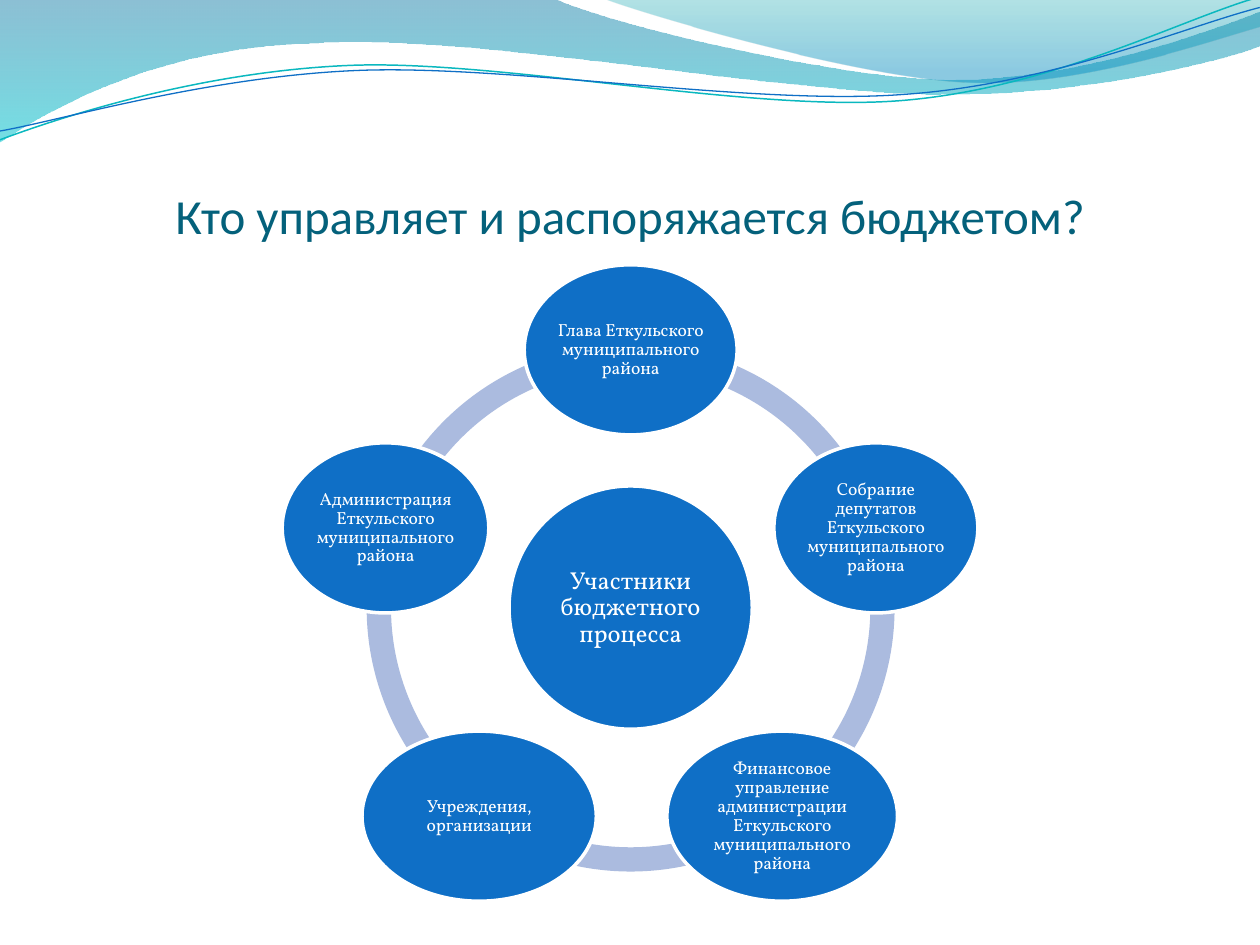
from math import cos, radians, sin

from lxml.etree import SubElement
from pptx import Presentation
from pptx.dml.color import RGBColor
from pptx.enum.shapes import MSO_SHAPE as Preset
from pptx.enum.text import MSO_ANCHOR as Anchor, PP_ALIGN as Align
from pptx.oxml.ns import qn
from pptx.util import Pt

WHITE = RGBColor(0xFF, 0xFF, 0xFF)
BLUE = RGBColor(0x0F, 0x6F, 0xC6)
TEAL = RGBColor(0x0A, 0xB8, 0xBF)
RING = RGBColor(0xAB, 0xBB, 0xDF)
TITLE_COLOR = RGBColor(0x04, 0x61, 0x7B)
DEEP_BLUE = RGBColor(0x00, 0x74, 0xA1)
CYAN = RGBColor(0x00, 0xC6, 0xCF)
SEA = RGBColor(0x00, 0xA1, 0xA9)
SKY = RGBColor(0x00, 0x8B, 0xBF)

TITLE = "Кто управляет и распоряжается бюджетом?"
HUB = "Участники бюджетного процесса"
# Clockwise from the top: text, oval width
PARTICIPANTS = [
    ("Глава Еткульского муниципального района", 121.7),
    ("Собрание депутатов Еткульского муниципального района", 116.6),
    ("Финансовое управление администрации Еткульского муниципального района", 131.8),
    ("Учреждения, организации", 133.9),
    ("Администрация Еткульского муниципального района", 118.1),
]

# Wave paths: a pair is a straight step, six numbers are a Bezier step
BANDS = [
    ([(0, 0), (316.8, -0.7), (342.7, 12.2, 478.1, 45.4, 545.8, 45.4),
      (614.2, 45.4, 689.8, 18.7, 720, 6.5), (720.7, 25.9),
      (707.8, 31.7, 626.4, 54.7, 537.1, 54),
      (447.8, 54, 275, 20.2, 185, 24.5),
      (92.9, 25.9, 33.1, 59.8, -0.7, 81.4)],
     [(0, DEEP_BLUE, 45), (1, CYAN, 55)]),
    ([(344.9, -0.7), (366.5, 7.9, 491, 44.6, 553.7, 46.8),
      (616.3, 49.7, 691.9, 23, 720, 15.1), (720, 0)],
     [(0, SEA, 30), (0.8, SKY, 45)]),
]
STROKES = [
    ([(0, 79.9), (34.6, 67, 113.8, 41, 199.4, 37.4),
      (284.4, 33.8, 427, 64.1, 513.4, 57.6),
      (599.8, 51.1, 675.4, 10.8, 718.6, -1.4)], TEAL, 0.85),
    ([(0, 74.9), (33.8, 69.1, 118.1, 43.9, 203.8, 40.3),
      (290.2, 36.7, 429.8, 60.5, 516.2, 54),
      (601.9, 48.2, 677.5, 15.1, 720, 4.3)], BLUE, 0.75),
]
TILT = 2.7  # degrees, counter-clockwise
UNITS = 100  # path units in a point

CENTER_X, CENTER_Y = 360.4, 347.2
RING_SIZE, HUB_SIZE = 301.7, 139
ORBIT, OVAL_HEIGHT = 147.3, 97.2

prs = Presentation()
prs.slide_width, prs.slide_height = Pt(720), Pt(540)
slide = prs.slides.add_slide(prs.slide_layouts[6])
shapes = slide.shapes


def turn(steps, degrees):
    """Turn a path clockwise about the middle of its end points."""
    mid_x, mid_y = ((a + b) / 2 for a, b in zip(steps[0], steps[-1][-2:]))
    c, s = cos(radians(degrees)), sin(radians(degrees))
    turned = []
    for step in steps:
        flat = []
        for x, y in zip(step[::2], step[1::2]):
            flat += [mid_x + (x - mid_x) * c - (y - mid_y) * s,
                     mid_y + (x - mid_x) * s + (y - mid_y) * c]
        turned.append(tuple(flat))
    return turned


def add_outline(steps, close):
    """Build a freeform, then join each three Bezier points into a curve."""
    points = [(x * UNITS, y * UNITS)
              for step in steps for x, y in zip(step[::2], step[1::2])]
    builder = shapes.build_freeform(*points[0], scale=Pt(1) / UNITS)
    builder.add_line_segments(points[1:], close=close)
    outline = builder.convert_to_shape()
    outline.shadow.inherit = False
    lines = iter(list(outline._element.spPr.iter(qn("a:lnTo"))))
    for step in steps[1:]:
        line = next(lines)
        if len(step) == 6:
            line.tag = qn("a:cubicBezTo")
            for _ in range(2):
                extra = next(lines)
                line.append(extra[0])
                extra.getparent().remove(extra)
    return outline


def add_centered(kind, x, y, width, height):
    part = shapes.add_shape(kind, Pt(x - width / 2), Pt(y - height / 2),
                            Pt(width), Pt(height))
    part.shadow.inherit = False
    part.fill.solid()
    return part


def write(holder, text, *, size, font, color, anchor, insets, spacing=1.0):
    frame = holder.text_frame
    frame.word_wrap = True
    frame.vertical_anchor = anchor
    (frame.margin_left, frame.margin_top,
     frame.margin_right, frame.margin_bottom) = map(Pt, insets)
    paragraph = frame.paragraphs[0]
    paragraph.alignment = Align.CENTER
    paragraph.line_spacing = spacing
    run = paragraph.add_run()
    run.text = text
    run.font.size, run.font.name = Pt(size), font
    run.font.color.rgb = color


def add_oval(text, x, y, width, height, size, inset):
    oval = add_centered(Preset.OVAL, x, y, width, height)
    oval.fill.fore_color.rgb = BLUE
    oval.line.color.rgb = WHITE
    oval.line.width = Pt(2)
    write(oval, text, size=size, font="Vollkorn", color=WHITE,
          anchor=Anchor.MIDDLE, insets=[inset] * 4, spacing=0.9)


# Gradient waves
for steps, stops in BANDS:
    band = add_outline(steps, close=True)
    band.line.fill.background()
    band.fill.gradient()
    band.fill.gradient_angle = 270
    for stop, (position, color, _) in zip(band.fill.gradient_stops, stops):
        stop.position = position
        stop.color.rgb = color
    tints = list(band._element.spPr.iter(qn("a:srgbClr")))
    for tint, (_, _, opacity) in zip(tints, stops):
        SubElement(tint, qn("a:alpha"), val=str(opacity * 1000))

# Thin wave lines
for steps, color, width in STROKES:
    stroke = add_outline(turn(steps, TILT), close=False)
    stroke.rotation = -TILT
    stroke.fill.background()
    stroke.line.color.rgb = color
    stroke.line.width = Pt(width)

# Title
title = shapes.add_textbox(Pt(36), Pt(90), Pt(648), Pt(49.7))
write(title, TITLE, size=28, font="Calibri", color=TITLE_COLOR,
      anchor=Anchor.BOTTOM, insets=(0, 3.6, 0, 0))

# Ring: one arc between each pair of neighbours
sector = 360 / len(PARTICIPANTS)
angles = [(270 + i * sector) % 360 for i in range(len(PARTICIPANTS))]
for angle in reversed(angles):
    arc = add_centered(Preset.BLOCK_ARC, CENTER_X, CENTER_Y, RING_SIZE, RING_SIZE)
    arc.fill.fore_color.rgb = RING
    arc.line.fill.background()
    # Angles are kept in 60000ths of a degree, adjustments in 100000ths
    arc.adjustments[0] = angle * 0.6
    arc.adjustments[1] = (angle + sector) % 360 * 0.6
    arc.adjustments[2] = 0.046

# Hub and participants
add_oval(HUB, CENTER_X, CENTER_Y, HUB_SIZE, HUB_SIZE, 14, 1.4)
for angle, (text, width) in zip(angles, PARTICIPANTS):
    add_oval(text, CENTER_X + ORBIT * cos(radians(angle)),
             CENTER_Y + ORBIT * sin(radians(angle)), width, OVAL_HEIGHT, 10, 0.7)

prs.save("out.pptx")
